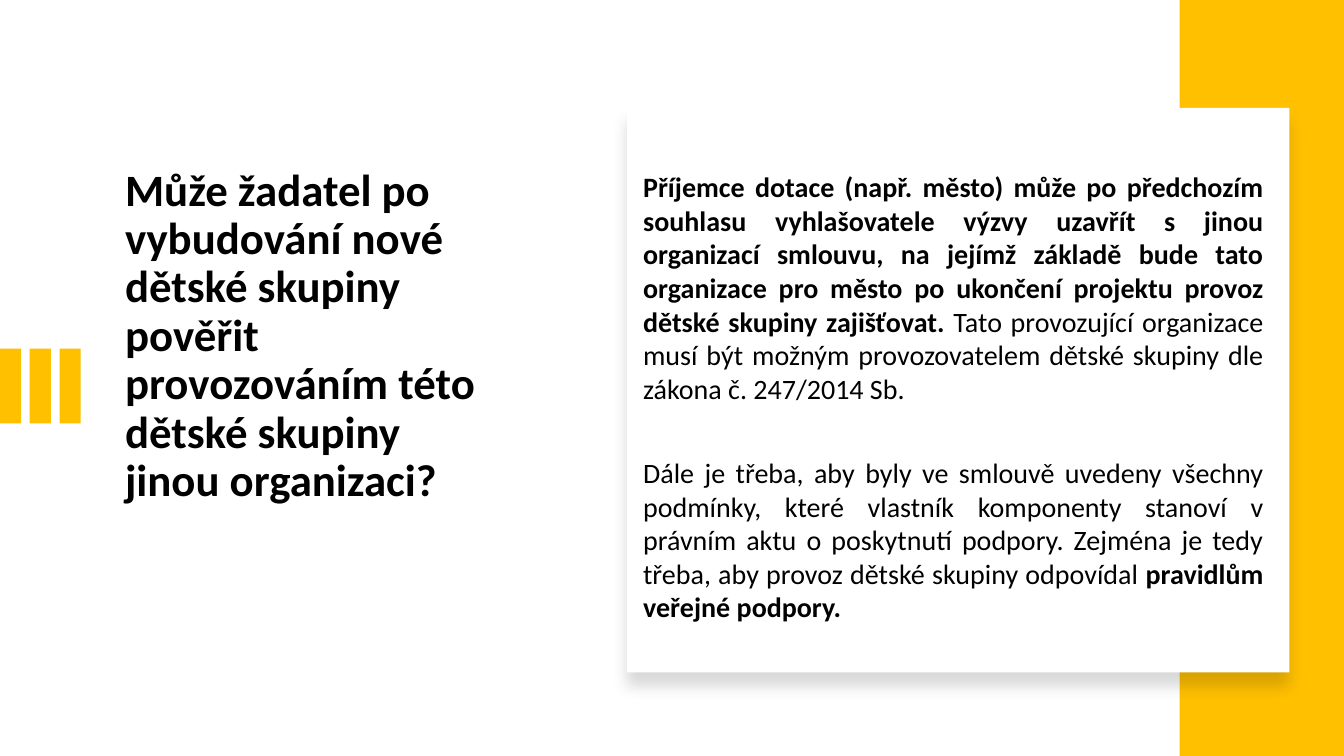
import pptx
import pptx.util
import pptx.dml.color
import pptx.enum.shapes
import pptx.enum.text
import pptx.oxml
import pptx.oxml.ns

Inches = pptx.util.Inches
Pt = pptx.util.Pt
RGBColor = pptx.dml.color.RGBColor
Align = pptx.enum.text.PP_ALIGN
Anchor = pptx.enum.text.MSO_ANCHOR

GOLD = RGBColor(0xFF, 0xC0, 0x00)
WHITE = RGBColor(0xFF, 0xFF, 0xFF)
BLACK = RGBColor(0x00, 0x00, 0x00)
FONT = "Calibri"

QUESTION = ("Může žadatel po vybudování nové dětské skupiny pověřit "
            "provozováním této dětské skupiny jinou organizaci?")

# Each paragraph is a list of (text, bold) spans
ANSWER = [
    [("Příjemce dotace (např. město) může po předchozím souhlasu vyhlašovatele "
      "výzvy uzavřít s jinou organizací smlouvu, na jejímž základě bude tato "
      "organizace pro město po ukončení projektu provoz dětské skupiny "
      "zajišťovat.", True),
     (" Tato provozující organizace musí být možným provozovatelem dětské "
      "skupiny dle zákona č. 247/2014 Sb.", False)],
    [("Dále je třeba, aby byly ve smlouvě uvedeny všechny podmínky, které "
      "vlastník komponenty stanoví v právním aktu o poskytnutí podpory. Zejména "
      "je tedy třeba, aby provoz dětské skupiny odpovídal ", False),
     ("pravidlům veřejné podpory.", True)],
]


def add_rectangle(shapes, left, top, width, height, color):
    box = shapes.add_shape(pptx.enum.shapes.MSO_SHAPE.RECTANGLE, Inches(left),
                           Inches(top), Inches(width), Inches(height))
    box.shadow.inherit = False
    box.fill.solid()
    box.fill.fore_color.rgb = color
    box.line.fill.background()
    return box


def add_soft_shadow(box):
    effects = box._element.spPr.find(pptx.oxml.ns.qn("a:effectLst"))
    effects.append(pptx.oxml.parse_xml(
        f'<a:outerShdw {pptx.oxml.ns.nsdecls("a")} blurRad="{Pt(11)}" '
        f'dist="{Pt(10)}" dir="5400000" algn="t" rotWithShape="0">'
        '<a:srgbClr val="000000"><a:alpha val="15000"/></a:srgbClr>'
        '</a:outerShdw>'))


def style_font(font, size):
    font.name = FONT
    font.size = Pt(size)
    font.color.rgb = BLACK


def fill_title(title):
    title.left, title.top = Inches(1.14), Inches(1.46)
    title.width, title.height = Inches(3.77), Inches(4.79)
    frame = title.text_frame
    frame.text = QUESTION
    frame.word_wrap = True
    frame.auto_size = pptx.enum.text.MSO_AUTO_SIZE.NONE
    frame.vertical_anchor = Anchor.TOP
    frame.margin_top = Inches(0.2)
    para = frame.paragraphs[0]
    para.alignment = Align.LEFT
    para.line_spacing = 0.9
    style_font(para.font, 32)
    para.font.bold = True


def add_answer(page):
    box = page.shapes.add_textbox(Inches(6.28), Inches(0.95),
                                  Inches(6.35), Inches(5.97))
    frame = box.text_frame
    frame.word_wrap = True
    frame.vertical_anchor = Anchor.MIDDLE
    for index, spans in enumerate(ANSWER):
        para = frame.add_paragraph() if index else frame.paragraphs[0]
        para.alignment = Align.JUSTIFY
        para.space_before = Pt(36 if index else 0)
        style_font(para.font, 20)
        for text, bold in spans:
            span = para.add_run()
            span.text = text
            span.font.bold = bold


def main():
    deck = pptx.Presentation()
    deck.slide_width, deck.slide_height = Inches(13.33), Inches(7.5)
    page = deck.slides.add_slide(deck.slide_layouts[5])
    fill_title(page.shapes.title)

    # Three bars at the left edge
    bars = page.shapes.add_group_shape()
    for index in range(3):
        add_rectangle(bars.shapes, index * 0.295, 3.46, 0.21, 0.74, GOLD)

    # Gold band and the white card over it
    add_rectangle(page.shapes, 11.7, 0, 1.63, 7.5, GOLD)
    card = add_rectangle(page.shapes, 6.22, 1.07, 6.57, 5.6, WHITE)
    add_soft_shadow(card)
    add_answer(page)

    deck.save("out.pptx")


if __name__ == "__main__":
    main()
